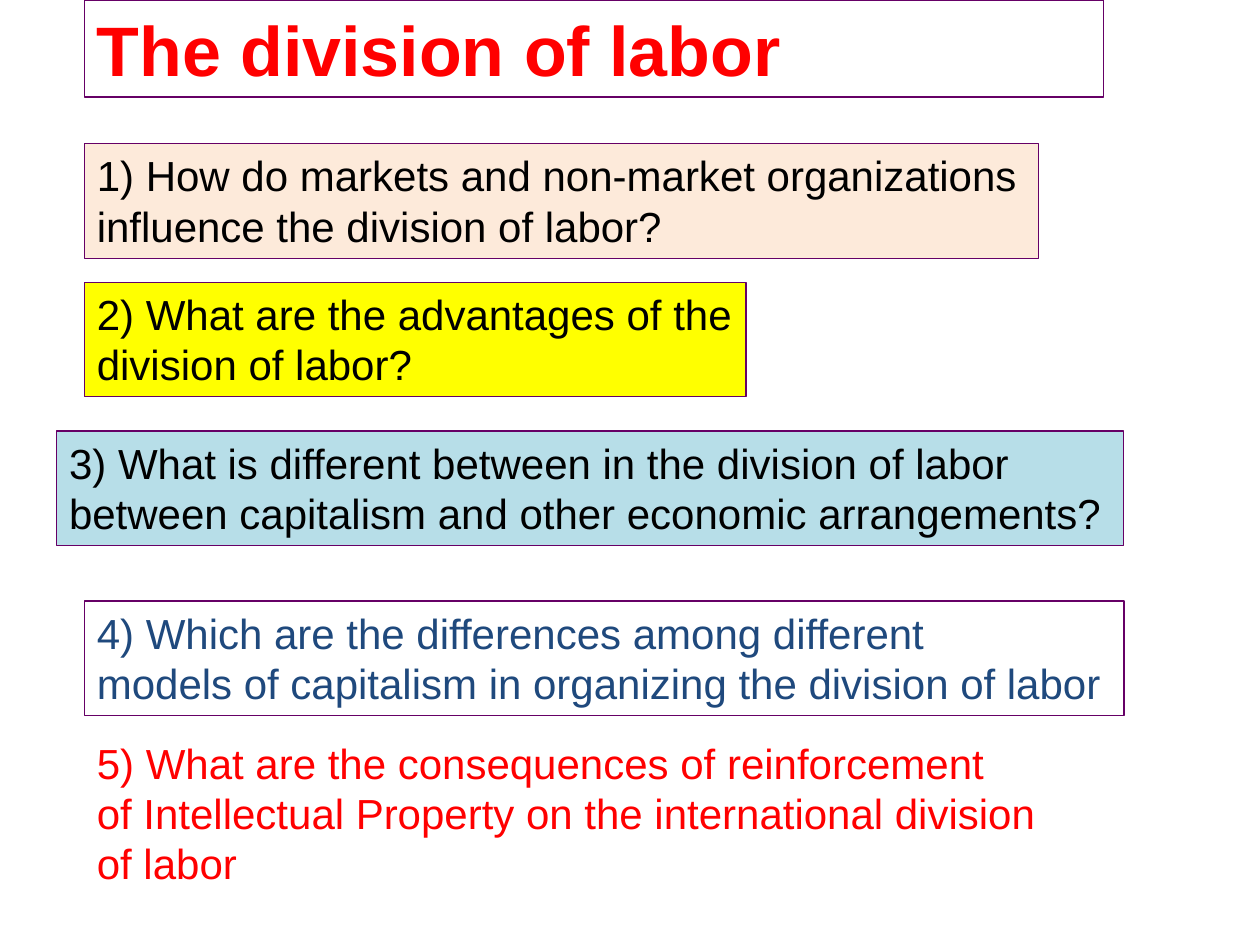
from dataclasses import dataclass

from pptx import Presentation
from pptx.dml.color import RGBColor
from pptx.enum.text import MSO_AUTO_SIZE
from pptx.util import Inches, Pt

FIT = MSO_AUTO_SIZE.SHAPE_TO_FIT_TEXT
WIDE, HIGH = Inches(10), Inches(7.5)
EDGE = 6.7  # common left edge, percent of slide width
PURPLE, RED, BLUE = "660066", "FF0000", "1F497D"


@dataclass
class Box:
    """A framed text; left and width are percents of the slide's width."""
    text: str
    top: float  # inches
    width: float
    height: float = 0.91  # inches
    left: float = EDGE
    fill: str | None = None
    line: str | None = PURPLE
    color: str = "000000"
    size: int = 24
    bold: bool = False
    wrap: bool = False


BOXES = [
    Box("The division of labor", 0, 80.9, 0.77,
        color=RED, size=40, bold=True, wrap=True),
    Box("1) How do markets and non-market organizations\n"
        "influence the division of labor?", 1.14, 75.7, fill="FDEADA"),
    Box("2) What are the advantages of the division of labor?",
        2.24, 52.5, fill="FFFF00", wrap=True),
    Box("3) What is different between in the division of labor\n"
        "between capitalism and other economic arrangements?",
        3.42, 84.7, left=4.5, fill="B7DEE8"),
    Box("4) Which are the differences among different\n"
        "models of capitalism in organizing the division of labor",
        4.77, 82.5, color=BLUE),
    Box("5) What are the consequences of reinforcement\n"
        "of Intellectual Property on the international division\n"
        "of labor", 5.8, 76.9, 1.31, line=None, color=RED),
]


def rgb(code: str) -> RGBColor:
    return RGBColor.from_string(code)


def draw(slide, box: Box) -> None:
    shape = slide.shapes.add_textbox(
        int(WIDE * box.left / 100), Inches(box.top),
        int(WIDE * box.width / 100), Inches(box.height))
    if box.fill:
        shape.fill.solid()
        shape.fill.fore_color.rgb = rgb(box.fill)
    if box.line:
        shape.line.color.rgb = rgb(box.line)
        shape.line.width = Pt(0.75)
    frame = shape.text_frame
    frame.text = box.text
    frame.word_wrap = box.wrap
    frame.auto_size = FIT
    for para in frame.paragraphs:
        for run in para.runs:
            font = run.font
            font.name = "Arial"
            font.size = Pt(box.size)
            font.bold = box.bold
            font.color.rgb = rgb(box.color)


def main() -> None:
    deck = Presentation()
    deck.slide_width, deck.slide_height = WIDE, HIGH
    slide = deck.slides.add_slide(deck.slide_layouts[6])
    for box in BOXES:
        draw(slide, box)
    deck.save("out.pptx")


if __name__ == "__main__":
    main()
